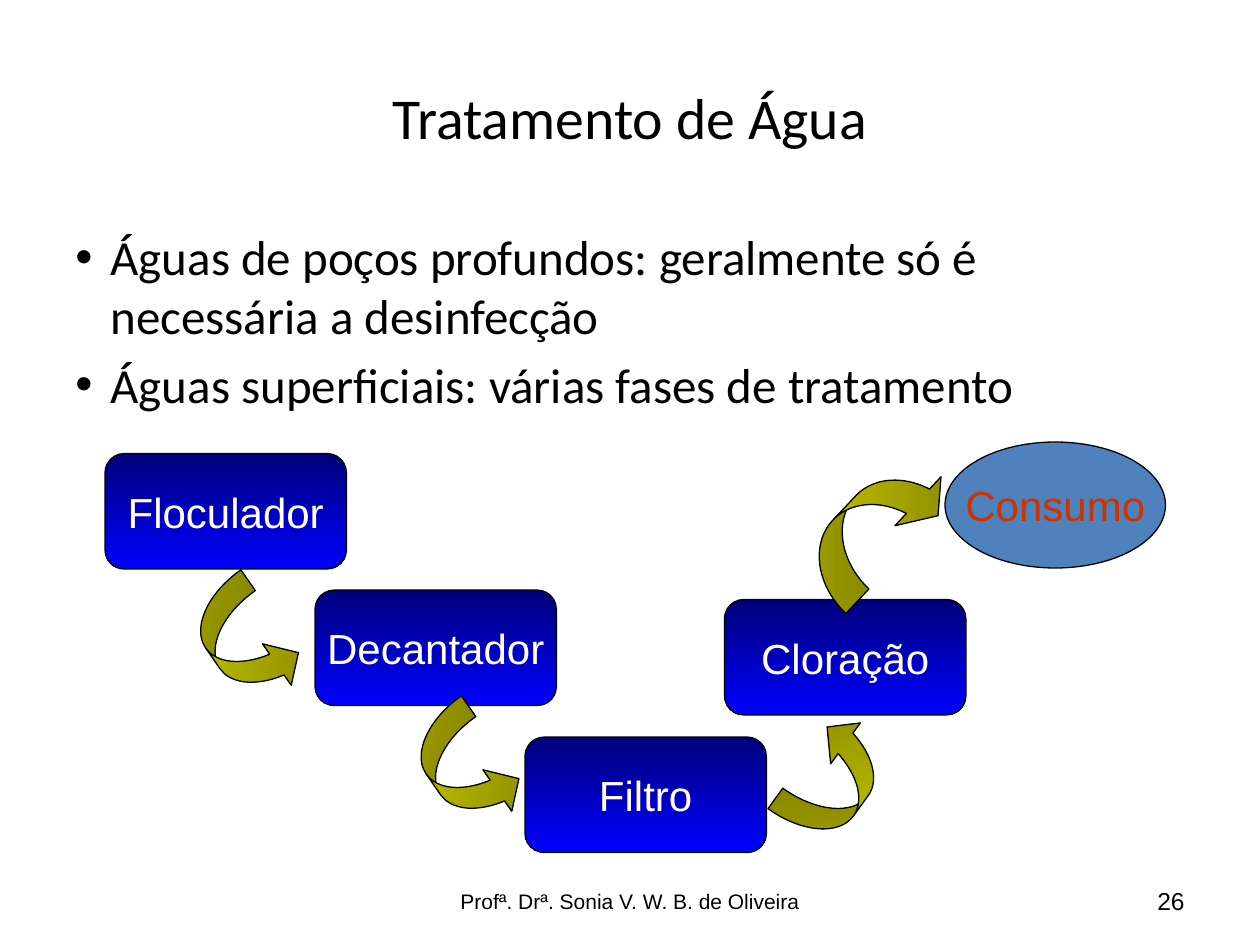
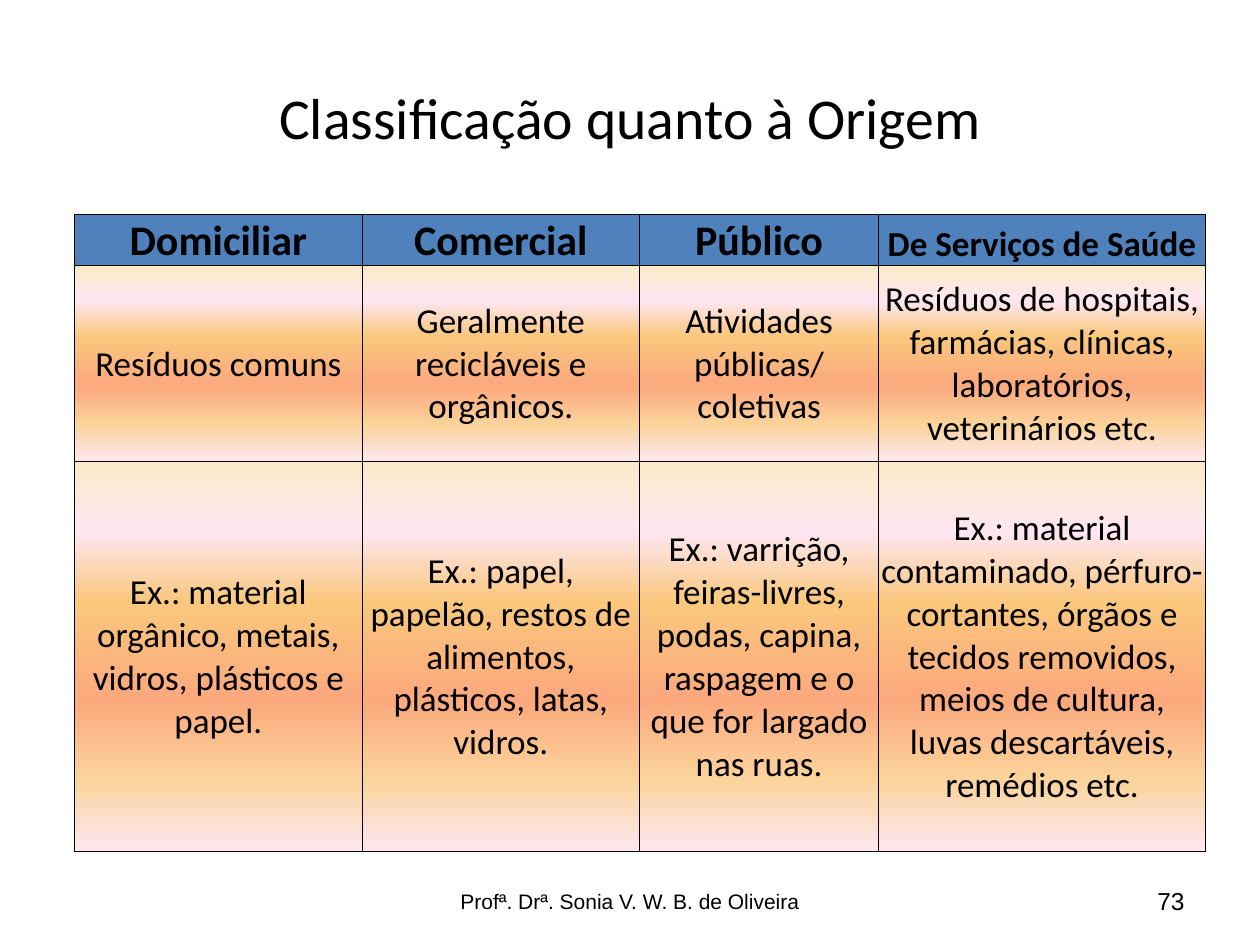
from dataclasses import dataclass

from lxml import etree
from pptx import Presentation, util as u
from pptx.dml.color import RGBColor
from pptx.enum import shapes, text
from pptx.oxml import ns

# All places and sizes are in cells of a 120 x 90 grid.
COLUMNS, ROWS = 120, 90
SLIDE_WIDTH, SLIDE_HEIGHT = u.Inches(10), u.Inches(7.5)


@dataclass(frozen=True)
class Theme:
    heading_font: str = "Calibri"
    label_font: str = "Arial"
    ink: str = "000000"
    paper: str = "FFFFFF"
    accent: str = "4F81BD"
    consumption_ink: str = "CC3300"
    stage: tuple = ((0, "00007A"), (100, "0000FF"))
    arrow: tuple = ((0, "C8C800"), (100, "8C8C00"))
    cell: tuple = ((0, "FBEAC7"), (18, "FEE7F2"), (36, "FAC77D"),
                   (61, "FBA97D"), (82, "FBD49C"), (100, "FEE7F2"))
    title_size: float = 33
    body_size: float = 28
    label_size: float = 24
    cell_size: float = 20
    number_size: float = 14
    footer_size: float = 12
    outline: float = 0.75
    border: float = 0.5


THEME = Theme()
ALIGN, ANCHOR, SHAPE = text.PP_ALIGN, text.MSO_ANCHOR, shapes.MSO_SHAPE

TITLE_AREA = (6, 3.6, 108, 15)
BODY_AREA = (6, 21, 108, 59.4)
FOOTER_AREA = (41, 83.4, 38, 4.8)
NUMBER_AREA = (86, 83.4, 28, 4.8)
FOOTER = "Profª. Drª. Sonia V. W. B. de Oliveira"

TREATMENT = {
    "title": "Tratamento de Água",
    "number": "26",
    "bullets": [
        "Águas de poços profundos: geralmente só é necessária a desinfecção",
        "Águas superficiais: várias fases de tratamento",
    ],
}
STAGE_SIZE = (23, 11)
STAGES = [
    ("Floculador", 10, 43.2),
    ("Decantador", 30, 56.2),
    ("Filtro", 50, 70.2),
    ("Cloração", 69, 57.1),
]
CONSUMPTION = ("Consumo", (90, 42.1, 21, 12))

RIGHT_ARROW = (SHAPE.CURVED_RIGHT_ARROW, (7, 12), (0.343, 0.686, 0.333))
DOWN_ARROW = (SHAPE.CURVED_DOWN_ARROW, (16, 7), (0.457, 0.914, 0.333))
ARROWS = [
    (RIGHT_ARROW, 20, 55.2, 325.2),
    (RIGHT_ARROW, 76, 68.2, 215.9),
    (RIGHT_ARROW, 41, 67.2, 325.2),
    (DOWN_ARROW, 75.5, 46.7, 313.3),
]

ORIGIN = {"title": "Classificação quanto à Origem", "number": "73"}
TABLE_CORNER = (7.1, 20.4)
TABLE_COLUMNS = (27.4, 26.4, 22.8, 31.1)
TABLE_ROWS = (4.9, 18.6, 37.2)
HEADER_SIZES = (THEME.label_size,) * 3 + (THEME.cell_size,)
WASTE = [
    ("Domiciliar", "Comercial", "Público", "De Serviços de Saúde"),
    ("Resíduos comuns",
     "Geralmente recicláveis e orgânicos.",
     "Atividades públicas/ coletivas",
     "Resíduos de hospitais, farmácias, clínicas, laboratórios, veterinários etc."),
    ("Ex.: material orgânico, metais, vidros, plásticos e papel.",
     "Ex.: papel, papelão, restos de alimentos, plásticos, latas, vidros.",
     "Ex.: varrição, feiras-livres, podas, capina, raspagem e o que for largado nas ruas.",
     "Ex.: material contaminado, pérfuro-cortantes, órgãos e tecidos removidos, "
     "meios de cultura, luvas descartáveis, remédios etc."),
]


def across(columns):
    return round(SLIDE_WIDTH * columns / COLUMNS)


def down(rows):
    return round(SLIDE_HEIGHT * rows / ROWS)


def place(left, top, width, height):
    return across(left), down(top), across(width), down(height)


def child(parent, tag, **attributes):
    return etree.SubElement(parent, ns.qn(tag), attributes)


def style(para, font, size, color=THEME.ink, align=ALIGN.CENTER, bold=False):
    para.alignment = align
    para.font.name, para.font.size, para.font.bold = font, u.Pt(size), bold
    para.font.color.rgb = RGBColor.from_string(color)


def paint_solid(fill, color):
    fill.solid()
    fill.fore_color.rgb = RGBColor.from_string(color)


def paint_gradient(fill, properties, stops, angle):
    """Fill with any number of stops; the angle runs clockwise."""
    fill.gradient()
    gradient = properties.find(ns.qn("a:gradFill"))
    for part in list(gradient):
        gradient.remove(part)
    stop_list = child(gradient, "a:gsLst")
    for percent, color in stops:
        stop = child(stop_list, "a:gs", pos=str(percent * 1000))
        child(stop, "a:srgbClr", val=color)
    child(gradient, "a:lin", ang=str(angle * 60000), scaled="0")


def add_text(page, area, words, font, size, align=ALIGN.CENTER):
    box = page.shapes.add_textbox(*place(*area))
    frame = box.text_frame
    frame.word_wrap, frame.vertical_anchor = True, ANCHOR.MIDDLE
    frame.text = words
    style(frame.paragraphs[0], font, size, align=align)


def add_page(deck, content):
    """Add a blank page with the shared title, footer and page number."""
    page = deck.slides.add_slide(deck.slide_layouts[6])
    paint_solid(page.background.fill, THEME.paper)
    add_text(page, TITLE_AREA, content["title"], THEME.heading_font, THEME.title_size)
    add_text(page, FOOTER_AREA, FOOTER, THEME.label_font, THEME.footer_size)
    add_text(page, NUMBER_AREA, content["number"], THEME.label_font,
             THEME.number_size, ALIGN.RIGHT)
    return page


def add_bullets(page, items):
    frame = page.shapes.add_textbox(*place(*BODY_AREA)).text_frame
    frame.word_wrap = True
    indent = u.Inches(0.28)
    for index, item in enumerate(items):
        para = frame.add_paragraph() if index else frame.paragraphs[0]
        para.text = item
        if index:
            para.space_before = u.Pt(THEME.body_size * 0.2)
        properties = para._p.get_or_add_pPr()
        properties.set("marL", str(indent))
        properties.set("indent", str(-indent))
        child(properties, "a:buFont", typeface=THEME.label_font)
        child(properties, "a:buChar", char="•")
        style(para, THEME.heading_font, THEME.body_size, align=ALIGN.LEFT)


def add_outlined(page, kind, area):
    shape = page.shapes.add_shape(kind, *place(*area))
    shape.shadow.inherit = False
    shape.line.color.rgb = RGBColor.from_string(THEME.ink)
    shape.line.width = u.Pt(THEME.outline)
    return shape


def label(shape, words, color):
    frame = shape.text_frame
    frame.word_wrap, frame.vertical_anchor = False, ANCHOR.MIDDLE
    frame.text = words
    style(frame.paragraphs[0], THEME.label_font, THEME.label_size, color)


def add_flow(page):
    for name, left, top in STAGES:
        stage = add_outlined(page, SHAPE.ROUNDED_RECTANGLE, (left, top, *STAGE_SIZE))
        paint_gradient(stage.fill, stage._element.spPr, THEME.stage, 90)
        label(stage, name, THEME.paper)

    name, area = CONSUMPTION
    consumption = add_outlined(page, SHAPE.OVAL, area)
    paint_solid(consumption.fill, THEME.accent)
    label(consumption, name, THEME.consumption_ink)

    for (kind, size, bends), left, top, rotation in ARROWS:
        arrow = add_outlined(page, kind, (left, top, *size))
        arrow.rotation = rotation
        for index, bend in enumerate(bends):
            arrow.adjustments[index] = bend
        paint_gradient(arrow.fill, arrow._element.spPr, THEME.arrow, 45)


def add_borders(properties):
    for index, side in enumerate(("a:lnL", "a:lnR", "a:lnT", "a:lnB")):
        line = child(properties, side, w=str(u.Pt(THEME.border)))
        child(child(line, "a:solidFill"), "a:srgbClr", val=THEME.ink)
        properties.insert(index, line)


def fill_cell(cell, words, size, is_header):
    cell.text = words
    cell.margin_left = cell.margin_right = cell.margin_top = u.Inches(0.01)
    cell.margin_bottom = 0
    cell.vertical_anchor = ANCHOR.BOTTOM if is_header else ANCHOR.MIDDLE
    style(cell.text_frame.paragraphs[0], THEME.heading_font, size, bold=is_header)
    properties = cell._tc.get_or_add_tcPr()
    if is_header:
        paint_solid(cell.fill, THEME.accent)
    else:
        paint_gradient(cell.fill, properties, THEME.cell, 90)
    add_borders(properties)


def add_waste_table(page):
    area = (*TABLE_CORNER, sum(TABLE_COLUMNS), sum(TABLE_ROWS))
    table = page.shapes.add_table(len(TABLE_ROWS), len(TABLE_COLUMNS), *place(*area)).table
    table.first_row = table.horz_banding = False
    for column, width in zip(table.columns, TABLE_COLUMNS):
        column.width = across(width)
    for row, height in zip(table.rows, TABLE_ROWS):
        row.height = down(height)
    for row_index, entries in enumerate(WASTE):
        is_header = row_index == 0
        for column_index, words in enumerate(entries):
            size = HEADER_SIZES[column_index] if is_header else THEME.cell_size
            fill_cell(table.cell(row_index, column_index), words, size, is_header)


def main():
    deck = Presentation()
    deck.slide_width, deck.slide_height = SLIDE_WIDTH, SLIDE_HEIGHT
    treatment = add_page(deck, TREATMENT)
    add_bullets(treatment, TREATMENT["bullets"])
    add_flow(treatment)
    add_waste_table(add_page(deck, ORIGIN))
    deck.save("out.pptx")


if __name__ == "__main__":
    main()
